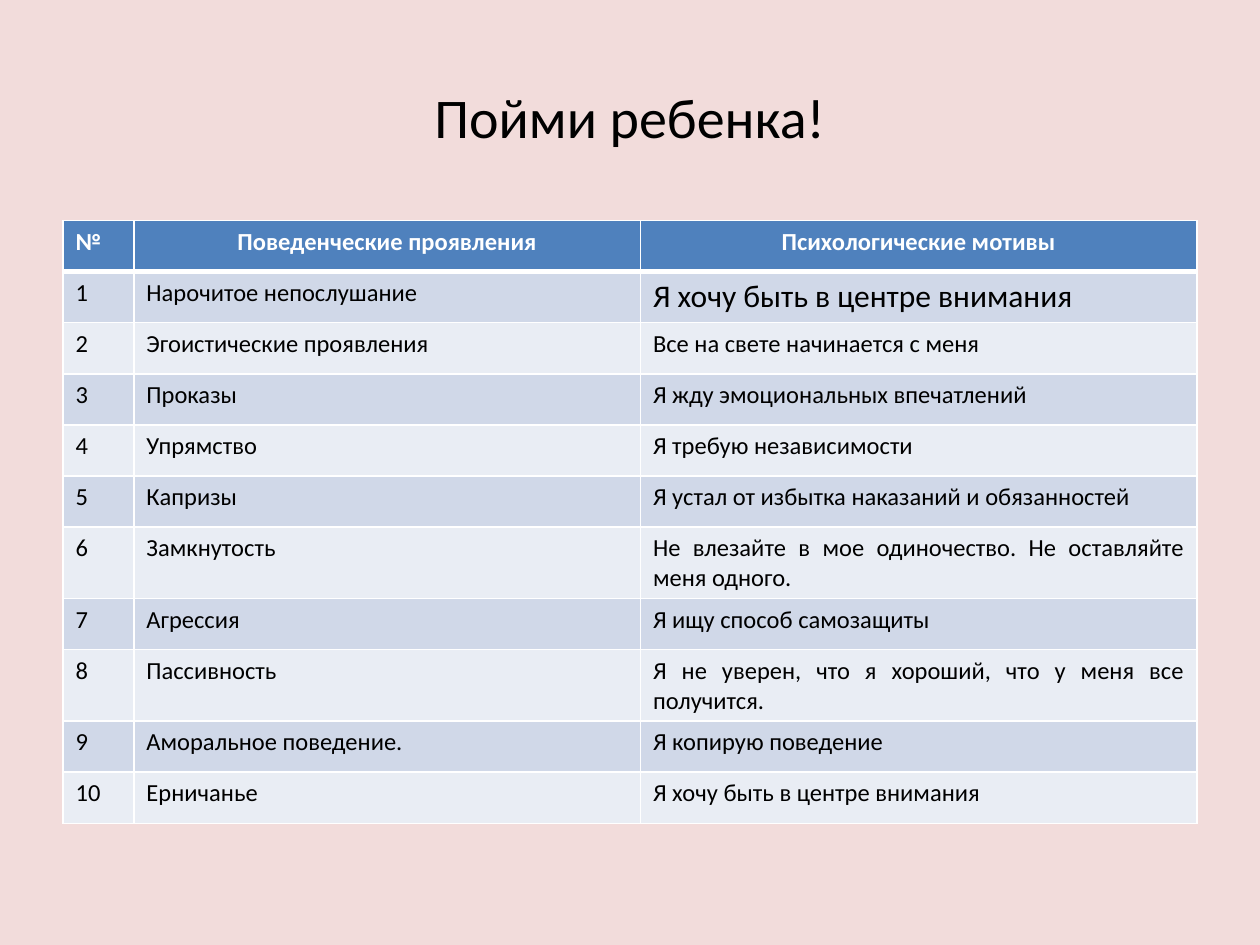
from lxml import etree
from pptx import Presentation
from pptx.dml.color import RGBColor
from pptx.enum.text import MSO_ANCHOR, PP_ALIGN
from pptx.oxml.ns import qn
from pptx.util import Pt

LEFT, CENTER, JUSTIFY = PP_ALIGN.LEFT, PP_ALIGN.CENTER, PP_ALIGN.JUSTIFY
MIDDLE = MSO_ANCHOR.MIDDLE

FONT = "Calibri"
COLORS = {
    "background": "F2DCDB",
    "text": "000000",
    "white": "FFFFFF",
    "header": "4F81BD",
    "odd": "D0D8E8",
    "even": "E9EDF4",
}
COLUMN_WIDTHS = (40.5, 289.5, 318)
ROW_HEIGHT = 29.2
HEADINGS = ("№", "Поведенческие проявления", "Психологические мотивы")
BEHAVIOURS = (
    ("Нарочитое непослушание", "Я хочу быть в центре внимания"),
    ("Эгоистические проявления", "Все на свете начинается с меня"),
    ("Проказы", "Я жду эмоциональных впечатлений"),
    ("Упрямство", "Я требую независимости"),
    ("Капризы", "Я устал от избытка наказаний и обязанностей"),
    ("Замкнутость", "Не влезайте в мое одиночество. Не оставляйте меня одного."),
    ("Агрессия", "Я ищу способ самозащиты"),
    ("Пассивность", "Я не уверен, что я хороший, что у меня все получится."),
    ("Аморальное поведение.", "Я копирую поведение"),
    ("Ерничанье", "Я хочу быть в центре внимания"),
)


def color(name):
    return RGBColor.from_string(COLORS[name])


def write_text(frame, text, size=14, color_name="text", bold=False, align=LEFT):
    paragraph = frame.paragraphs[0]
    paragraph.alignment = align
    run = paragraph.add_run()
    run.text = text
    run.font.name = FONT
    run.font.size = Pt(size)
    run.font.bold = bold
    run.font.color.rgb = color(color_name)


def set_borders(cell, top=1, bottom=1):
    properties = cell._tc.get_or_add_tcPr()
    for tag, width in (("a:lnL", 1), ("a:lnR", 1), ("a:lnT", top), ("a:lnB", bottom)):
        line = etree.SubElement(properties, qn(tag), w=str(Pt(width)))
        fill = etree.SubElement(line, qn("a:solidFill"))
        etree.SubElement(fill, qn("a:srgbClr"), val=COLORS["white"])


def fill_cell(cell, fill_name):
    cell.fill.solid()
    cell.fill.fore_color.rgb = color(fill_name)


def add_title(slide, text):
    box = slide.shapes.add_textbox(Pt(36), Pt(21.6), Pt(648), Pt(90))
    box.text_frame.word_wrap = True
    box.text_frame.vertical_anchor = MIDDLE
    write_text(box.text_frame, text, size=32, align=CENTER)


def add_behaviour_table(slide):
    row_count = len(BEHAVIOURS) + 1
    table = slide.shapes.add_table(
        row_count, len(COLUMN_WIDTHS), Pt(36), Pt(126),
        Pt(sum(COLUMN_WIDTHS)), Pt(ROW_HEIGHT * row_count),
    ).table
    for column, width in zip(table.columns, COLUMN_WIDTHS):
        column.width = Pt(width)
    for row in table.rows:
        row.height = Pt(ROW_HEIGHT)

    for column, heading in enumerate(HEADINGS):
        cell = table.cell(0, column)
        set_borders(cell, bottom=3)
        fill_cell(cell, "header")
        write_text(cell.text_frame, heading, color_name="white", bold=True,
                   align=CENTER if column else LEFT)

    for number, behaviour in enumerate(BEHAVIOURS, start=1):
        for column, text in enumerate((str(number), *behaviour)):
            cell = table.cell(number, column)
            set_borders(cell, top=3 if number == 1 else 1)
            fill_cell(cell, "odd" if number % 2 else "even")
            write_text(cell.text_frame, text,
                       size=18 if (number, column) == (1, 2) else 14,
                       align=JUSTIFY if column else LEFT)


def main():
    presentation = Presentation()
    presentation.slide_width = Pt(720)
    presentation.slide_height = Pt(540)
    slide = presentation.slides.add_slide(presentation.slide_layouts[6])
    slide.background.fill.solid()
    slide.background.fill.fore_color.rgb = color("background")
    add_title(slide, "Пойми ребенка!")
    add_behaviour_table(slide)
    presentation.save("out.pptx")


if __name__ == "__main__":
    main()
